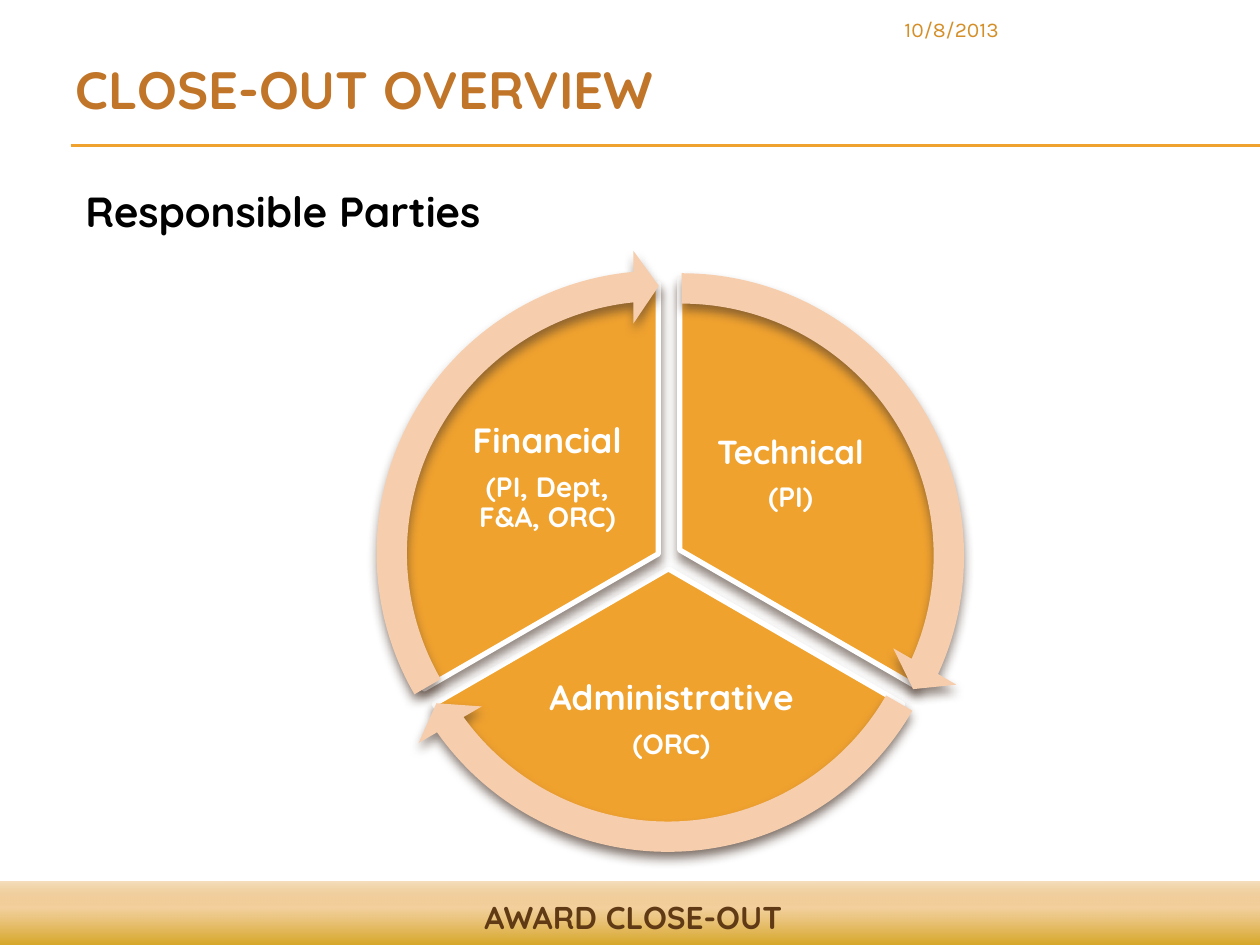
from lxml import etree
from pptx import Presentation
from pptx.dml.color import RGBColor
from pptx.enum import shapes, text
from pptx.oxml.ns import qn
from pptx.util import Inches, Pt

THEME = {
    "head": "Quicksand", "date_font": "Karla",
    "amber": "F0A22E", "peach": "F6CEAD", "white": "FFFFFF", "black": "000000",
    "title": "C17529", "footer": "603A14", "date": "D48F29", "shadow": "4E3B30",
    "bar": [(0, "CC9900", 100), (65, "EFC17E", 75), (100, "D68000", 25)],
    "title_size": 30, "body_size": 24, "footer_size": 18, "date_size": 12,
    "detail_size": 16, "rule": 0.75, "gap": 3,
}
STEP = 120
SWEEP = 114.5
TURN = 0.6

prs = Presentation()
prs.slide_width, prs.slide_height = Inches(10), Inches(7.5)
COL, ROW = prs.slide_width / 100, prs.slide_height / 75
s = prs.slides.add_slide(prs.slide_layouts[6])


def cells(x, y, w, h):
    return [int(v) for v in (x * COL, y * ROW, w * COL, h * ROW)]


def write(box, lines, color, font, bold=True, frame=None, para=None, after=0):
    tf = s.shapes.add_textbox(*cells(*box)).text_frame
    for name, value in {"word_wrap": True, **(frame or {})}.items():
        setattr(tf, name, value)
    for i, (words, size) in enumerate(lines):
        p = tf.paragraphs[0] if i == 0 else tf.add_paragraph()
        for name, value in {"space_after": Pt(size * after), **(para or {})}.items():
            setattr(p, name, value)
        r = p.add_run()
        r.text = words
        for name, value in {"name": font, "size": Pt(size), "bold": bold}.items():
            setattr(r.font, name, value)
        r.font.color.rgb = RGBColor.from_string(color)


for y in (11.5, 11.6):
    x1, y1, x2, y2 = cells(5.6, y, 100, y)
    rule = s.shapes.add_connector(shapes.MSO_CONNECTOR.STRAIGHT, x1, y1, x2, y2)
    rule.line.width = Pt(THEME["rule"])
    rule.line.color.rgb = RGBColor.from_string(THEME["amber"])
    etree.SubElement(rule._element.spPr, qn("a:effectLst"))

bar = s.shapes.add_shape(shapes.MSO_SHAPE.RECTANGLE, *cells(-0.1, 70, 100.3, 5.8))
bar.shadow.inherit = False
bar.line.fill.background()
bar.fill.gradient()
grad = bar._element.spPr.find(qn("a:gradFill"))
for child in list(grad):
    grad.remove(child)
stops = etree.SubElement(grad, qn("a:gsLst"))
for pos, color, alpha in THEME["bar"]:
    gs = etree.SubElement(stops, qn("a:gs"), pos=str(pos * 1000))
    clr = etree.SubElement(gs, qn("a:srgbClr"), val=color)
    etree.SubElement(clr, qn("a:alpha"), val=str(alpha * 1000))
etree.SubElement(grad, qn("a:lin"), ang=str(270 * 60000), scaled="0")

center = {"alignment": text.PP_ALIGN.CENTER}
write((1.5, 70.8, 97.5, 4), [("AWARD CLOSE-OUT", THEME["footer_size"])],
      THEME["footer"], THEME["head"], para=center)
write((5, 3, 88.3, 7), [("CLOSE-OUT OVERVIEW", THEME["title_size"])],
      THEME["title"], THEME["head"], frame={"vertical_anchor": text.MSO_ANCHOR.BOTTOM})
write((5.8, 14.2, 90.8, 9.9), [("Responsible Parties", THEME["body_size"])],
      THEME["black"], THEME["head"], after=0.25)

parties = [
    ("Technical", 19, "(PI)", (32.5, 22.2), (30, 20), (55.1, 31.3, 15.3, 12.8)),
    ("Administrative", 20, "(ORC)", (31.6, 23.7), (28.9, 21.1), (41.8, 51.6, 23, 11.2)),
    ("Financial", 20, "(PI, Dept, F&A, ORC)", (30.8, 22.5), (28.2, 19.8), (35.8, 31.6, 15.3, 12.8)),
]
label_frame = {"vertical_anchor": text.MSO_ANCHOR.MIDDLE}
label_frame.update({"margin_" + side: Inches(0.03) for side in ("left", "top", "right", "bottom")})

wedges, arrows = [], []
for i, (name, size, who, wedge, arrow, label) in enumerate(parties):
    start = (270 + i * STEP) % 360
    end = (start + STEP) % 360
    head = (start + SWEEP) % 360
    wedges.append((shapes.MSO_SHAPE.PIE, (*wedge, 42.9, 42.9), "amber",
                   [start * TURN, end * TURN],
                   (label, [(name, size), (who, THEME["detail_size"])])))
    arrows.append((shapes.MSO_SHAPE.CIRCULAR_ARROW, (*arrow, 48.2, 48.2), "peach",
                   [0.05, 3.28, head * TURN, start * TURN, 0.06], None))

for kind, box, color, angles, label in wedges + arrows:
    sp = s.shapes.add_shape(kind, *cells(*box))
    for i, angle in enumerate(angles):
        sp.adjustments[i] = angle
    sp.fill.solid()
    sp.fill.fore_color.rgb = RGBColor.from_string(THEME[color])
    if label:
        sp.line.width = Pt(THEME["gap"])
        sp.line.color.rgb = RGBColor.from_string(THEME["white"])
    else:
        sp.line.fill.background()
    sp.shadow.inherit = False
    shade = etree.SubElement(sp._element.spPr.find(qn("a:effectLst")), qn("a:outerShdw"),
                             blurRad=str(int(Pt(6))), dist=str(int(Pt(4))),
                             dir=str(90 * 60000), rotWithShape="0")
    clr = etree.SubElement(shade, qn("a:srgbClr"), val=THEME["shadow"])
    etree.SubElement(clr, qn("a:alpha"), val="60000")
    if label:
        write(*label, THEME["white"], THEME["head"], frame=label_frame,
              para={**center, "line_spacing": 0.9}, after=0.35)

write((70.8, 0.8, 27.5, 3.2), [("10/8/2013", THEME["date_size"])],
      THEME["date"], THEME["date_font"], bold=False)

prs.save("out.pptx")
